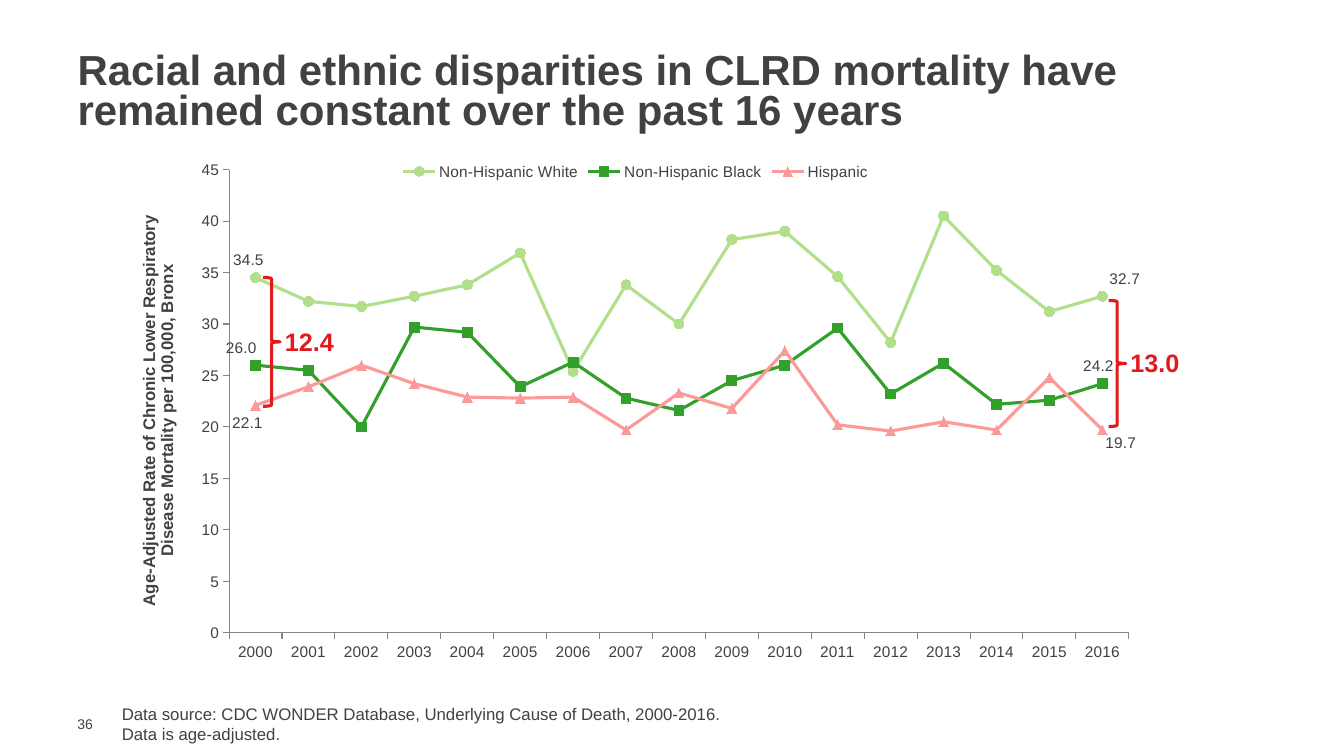
from dataclasses import dataclass

from pptx import Presentation
from pptx.chart.data import CategoryChartData
from pptx.dml.color import RGBColor
from pptx.enum.chart import (XL_CHART_TYPE, XL_LABEL_POSITION, XL_LEGEND_POSITION,
                             XL_MARKER_STYLE, XL_TICK_MARK)
from pptx.enum.shapes import MSO_SHAPE
from pptx.enum.text import MSO_ANCHOR, MSO_AUTO_SIZE, PP_ALIGN
from pptx.oxml.xmlchemy import OxmlElement
from pptx.util import Cm, Pt

TITLE_ONLY = 5
ABOVE, BELOW = XL_LABEL_POSITION.ABOVE, XL_LABEL_POSITION.BELOW
LINE_MARKERS = XL_CHART_TYPE.LINE_MARKERS
CIRCLE, SQUARE, TRIANGLE = (XL_MARKER_STYLE.CIRCLE, XL_MARKER_STYLE.SQUARE,
                            XL_MARKER_STYLE.TRIANGLE)
TICK_OUTSIDE = XL_TICK_MARK.OUTSIDE
LEGEND_TOP = XL_LEGEND_POSITION.TOP
RIGHT_BRACE = MSO_SHAPE.RIGHT_BRACE
MIDDLE, TOP = MSO_ANCHOR.MIDDLE, MSO_ANCHOR.TOP
LEFT = PP_ALIGN.LEFT
NO_AUTOFIT = MSO_AUTO_SIZE.NONE


@dataclass(frozen=True)
class Theme:
    font: str = "Arial"
    text: RGBColor = RGBColor(0x41, 0x40, 0x42)
    axis: RGBColor = RGBColor(0x86, 0x86, 0x86)
    accent: RGBColor = RGBColor(0xE3, 0x1A, 0x1C)
    white_group: RGBColor = RGBColor(0xB2, 0xDF, 0x8A)
    black_group: RGBColor = RGBColor(0x33, 0xA0, 0x2C)
    hispanic_group: RGBColor = RGBColor(0xFB, 0x9A, 0x99)
    title_size: Pt = Pt(30)
    gap_size: Pt = Pt(18)
    note_size: Pt = Pt(12)
    chart_size: Pt = Pt(11)
    number_size: Pt = Pt(10)
    line_width: Pt = Pt(2.25)


THEME = Theme()
YEARS = range(2000, 2017)
# Name, colour, marker, yearly rates, and for each labelled point:
# index, label position, shift as fractions of the chart's width and height
GROUPS = [
    ("Non-Hispanic White", THEME.white_group, CIRCLE,
     [34.5, 32.2, 31.7, 32.7, 33.8, 36.9, 25.4, 33.8, 30, 38.2, 39, 34.6, 28.2,
      40.5, 35.2, 31.2, 32.7],
     [(0, ABOVE, -0.007, 0), (16, ABOVE, 0.022, 0)]),
    ("Non-Hispanic Black", THEME.black_group, SQUARE,
     [26, 25.5, 20, 29.7, 29.2, 23.9, 26.3, 22.8, 21.6, 24.5, 26, 29.6, 23.2,
      26.2, 22.2, 22.6, 24.2],
     [(0, ABOVE, -0.014, 0), (16, ABOVE, -0.004, 0)]),
    ("Hispanic", THEME.hispanic_group, TRIANGLE,
     [22.1, 23.9, 26, 24.2, 22.9, 22.8, 22.9, 19.7, 23.3, 21.8, 27.4, 20.2, 19.6,
      20.5, 19.7, 24.8, 19.7],
     [(0, BELOW, -0.008, 0), (16, BELOW, 0.018, -0.01)]),
]


def style_font(font, size, color=THEME.text, bold=False):
    font.name, font.size, font.bold = THEME.font, size, bold
    font.color.rgb = color


def add_text(slide, box, lines, size, color=THEME.text, bold=False, anchor=TOP):
    shape = slide.shapes.add_textbox(*map(Cm, box))
    frame = shape.text_frame
    frame.word_wrap = True
    frame.vertical_anchor = anchor
    frame.text = "\n".join(lines)
    for paragraph in frame.paragraphs:
        style_font(paragraph.font, size, color, bold)
    return shape


def set_title(slide, box, text):
    title = slide.shapes.title
    title.left, title.top, title.width, title.height = map(Cm, box)
    frame = title.text_frame
    frame.text = text
    frame.auto_size = NO_AUTOFIT
    frame.vertical_anchor = MIDDLE
    paragraph = frame.paragraphs[0]
    paragraph.alignment = LEFT
    paragraph.line_spacing = 0.8
    style_font(paragraph.font, THEME.title_size, bold=True)


def manual_layout(**settings):
    """Return a c:layout element holding the given settings in order."""
    layout = OxmlElement("c:layout")
    manual = OxmlElement("c:manualLayout")
    layout.append(manual)
    for name, value in settings.items():
        setting = OxmlElement(f"c:{name}")
        setting.set("val", str(value))
        manual.append(setting)
    return layout


def label_point(series, index, position, shift_x, shift_y):
    label = series.points[index].data_label
    style_font(label.font, THEME.chart_size)
    label.position = position
    element = series._element.xpath(f"c:dLbls/c:dLbl[c:idx/@val='{index}']")[0]
    number_format = OxmlElement("c:numFmt")
    number_format.set("formatCode", "0.0")
    number_format.set("sourceLinked", "0")
    element.insert(1, manual_layout(x=shift_x, y=shift_y))
    element.insert(2, number_format)


def style_series(series, color, marker, labels):
    series.smooth = False
    series.format.line.color.rgb = color
    series.format.line.width = THEME.line_width
    series.marker.style, series.marker.size = marker, 7
    series.marker.format.fill.solid()
    series.marker.format.fill.fore_color.rgb = color
    series.marker.format.line.color.rgb = color
    for label in labels:
        label_point(series, *label)
    series.data_labels.show_value = False


def style_axes(chart, value_title):
    for axis in (chart.category_axis, chart.value_axis):
        axis.has_major_gridlines = False
        axis.major_tick_mark = TICK_OUTSIDE
        axis.format.line.color.rgb = THEME.axis
        axis.format.line.width = Pt(0.75)
        style_font(axis.tick_labels.font, THEME.chart_size)
    axis = chart.value_axis
    axis.minimum_scale, axis.maximum_scale, axis.major_unit = 0, 45, 5
    axis.tick_labels.number_format = "0"
    axis.tick_labels.number_format_is_linked = False
    frame = axis.axis_title.text_frame
    frame.text = value_title
    style_font(frame.paragraphs[0].font, THEME.note_size, bold=True)


def add_rate_chart(slide, box):
    data = CategoryChartData()
    data.categories = [str(year) for year in YEARS]
    for name, _, _, rates, _ in GROUPS:
        data.add_series(name, rates)
    chart = slide.shapes.add_chart(LINE_MARKERS, *map(Cm, box), data).chart
    style_font(chart.font, THEME.chart_size)
    chart.has_title = False
    chart.has_legend = True
    chart.legend.position = LEGEND_TOP
    chart.legend.include_in_layout = False
    style_font(chart.legend.font, THEME.chart_size)
    style_axes(chart, "Age-Adjusted Rate of Chronic Lower Respiratory "
                      "Disease Mortality per 100,000, Bronx")
    plot = chart.plots[0]
    plot.vary_by_categories = False
    for series, (_, color, marker, _, labels) in zip(plot.series, GROUPS):
        style_series(series, color, marker, labels)
    plot_area = chart._chartSpace.chart.plotArea
    for layout in plot_area.xpath("c:layout"):
        plot_area.remove(layout)
    plot_area.insert(0, manual_layout(layoutTarget="inner", xMode="edge", yMode="edge",
                                      x=0.101, y=0.034, w=0.883, h=0.856))


def add_gap(slide, box, text):
    """Add a brace filling the box and its value beside the tip."""
    left, top, _, height = box
    brace = slide.shapes.add_shape(RIGHT_BRACE, *map(Cm, box))
    brace.shadow.inherit = False
    brace.fill.background()
    brace.line.color.rgb = THEME.accent
    brace.line.width = THEME.line_width
    label_height = 1.04
    label_box = (left + 0.3, top + (height - label_height) / 2, 2.2, label_height)
    add_text(slide, label_box, [text], THEME.gap_size, THEME.accent, bold=True)


def add_footer(slide, box):
    left, top, width, height = box
    number = add_text(slide, (left, top + 0.43, 1.09, 0.43), ["36"],
                      THEME.number_size, anchor=MIDDLE)
    frame = number.text_frame
    frame.margin_top = frame.margin_right = frame.margin_bottom = 0
    add_text(slide, (left + 1.12, top, width - 1.12, height),
             ["Data source: CDC WONDER Database, Underlying Cause of Death, 2000-2016.",
              "Data is age-adjusted."], THEME.note_size)


def main():
    presentation = Presentation()
    presentation.slide_width, presentation.slide_height = Cm(33.87), Cm(19.05)
    slide = presentation.slides.add_slide(presentation.slide_layouts[TITLE_ONLY])
    set_title(slide, (1.7, 1.19, 30.48, 2.31),
              "Racial and ethnic disparities in CLRD mortality have "
              "remained constant over the past 16 years")
    add_rate_chart(slide, (3.18, 3.81, 25.68, 13.64))
    add_gap(slide, (27.94, 7.57, 0.43, 3.18), "13.0")
    add_gap(slide, (6.63, 6.99, 0.43, 3.25), "12.4")
    add_footer(slide, (1.7, 17.6, 25.78, 1.27))
    presentation.save("out.pptx")


if __name__ == "__main__":
    main()
